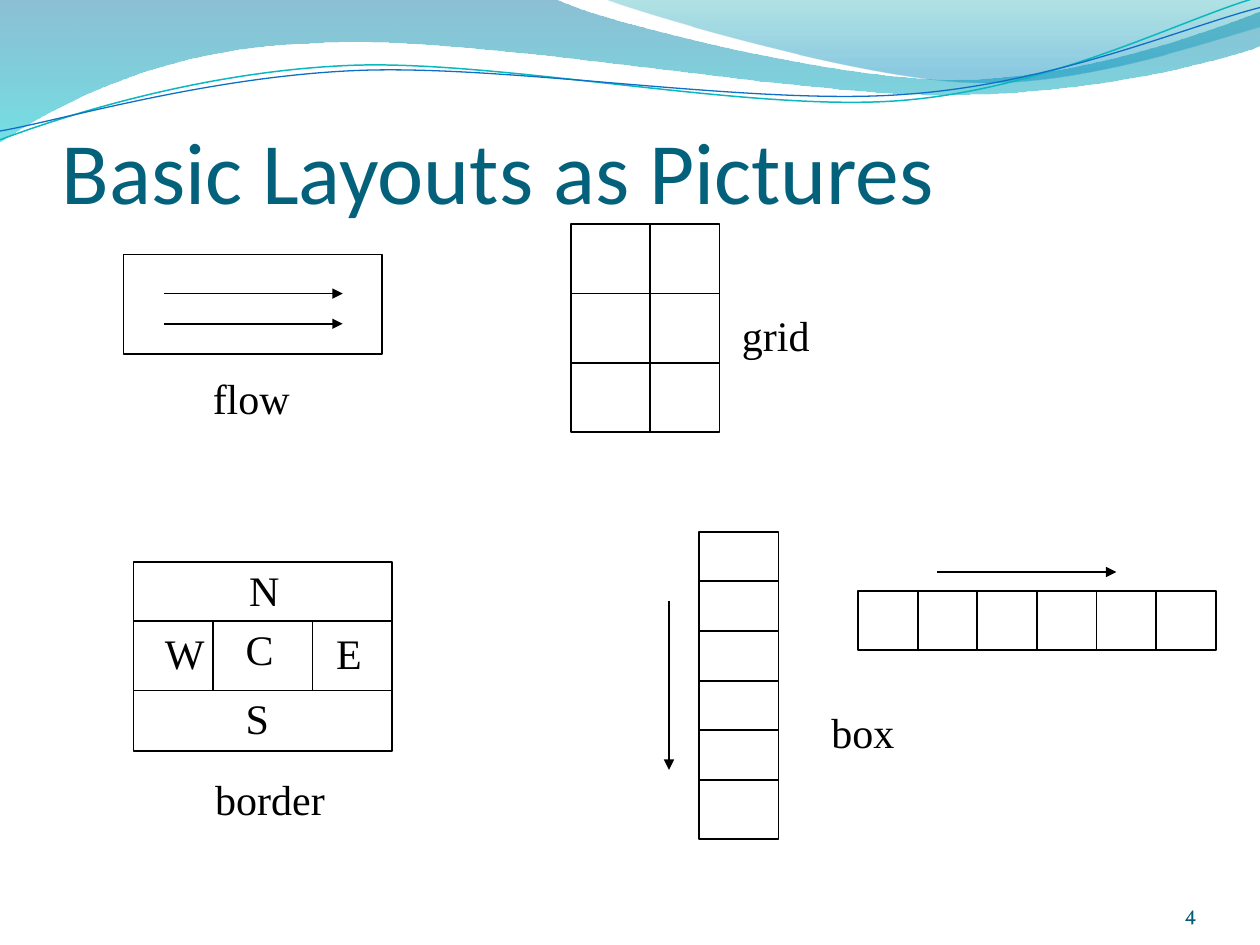
from dataclasses import dataclass
from lxml.etree import SubElement
from pptx import Presentation
from pptx.dml.color import RGBColor as RGB
from pptx.enum.shapes import MSO_CONNECTOR as LINK, MSO_SHAPE as SHAPE
from pptx.enum.text import MSO_ANCHOR as ANCHOR, MSO_AUTO_SIZE as FIT, PP_ALIGN as ALIGN
from pptx.oxml.ns import qn
from pptx.util import Inches, Pt


@dataclass(frozen=True)
class Theme:
    ink: str = "000000"
    title: str = "04617B"
    page: str = "045D75"
    teal: str = "0AB8BF"
    blue: str = "0F6FC6"
    head: str = "Calibri"
    body: str = "Times New Roman"
    foot: str = "Vollkorn"
    big: int = 50
    mid: int = 24
    small: int = 12
    rule: int = 1


THEME = Theme()


def style(run, face, size, color):
    run.font.name = face
    run.font.size = Pt(size)
    run.font.color.rgb = RGB.from_string(color)


def stroke(line, color, width):
    line.color.rgb = RGB.from_string(color)
    line.width = Pt(width)


def bend(shape, parts):
    legs = iter(list(shape.element.iter(qn("a:lnTo"))))
    for part in parts:
        group = [next(legs) for _ in range(len(part) // 2)]
        if len(group) == 3:
            first = group[0]
            first.tag = qn("a:cubicBezTo")
            for leg in group[1:]:
                first.append(leg[0])
                leg.getparent().remove(leg)


def outline(slide, start, parts, close):
    dots = [(Inches(part[i]), Inches(part[i + 1]))
            for part in parts for i in range(0, len(part), 2)]
    pen = slide.shapes.build_freeform(*map(Inches, start))
    pen.add_line_segments(dots, close=close)
    shape = pen.convert_to_shape()
    bend(shape, parts)
    shape.shadow.inherit = False
    return shape


def add_wave(slide, start, parts, stops):
    shape = outline(slide, start, parts, True)
    shape.line.fill.background()
    shape.fill.gradient()
    shape.fill.gradient_angle = 270
    for stop, (place, color, _) in zip(shape.fill.gradient_stops, stops):
        stop.position = place
        stop.color.rgb = RGB.from_string(color)
    tints = shape.element.spPr.iter(qn("a:srgbClr"))
    for tint, (_, _, alpha) in zip(tints, stops):
        SubElement(tint, qn("a:alpha"), val=str(alpha * 1000))


def add_curve(slide, start, parts, color, width):
    shape = outline(slide, start, parts, False)
    shape.fill.background()
    stroke(shape.line, color, width)


def add_frame(slide, x, y, w, h):
    box = slide.shapes.add_shape(SHAPE.RECTANGLE, *map(Inches, (x, y, w, h)))
    box.shadow.inherit = False
    box.fill.background()
    stroke(box.line, THEME.ink, THEME.rule)
    return box


def add_line(slide, x1, y1, x2, y2, arrow=False):
    line = slide.shapes.add_connector(LINK.STRAIGHT, *map(Inches, (x1, y1, x2, y2)))
    stroke(line.line, THEME.ink, THEME.rule)
    props = line.element.spPr
    if arrow:
        SubElement(props.find(qn("a:ln")), qn("a:tailEnd"), type="triangle")
    SubElement(props, qn("a:effectLst"))
    return line


def add_cells(slide, x, y, w, h, rows=(), cols=()):
    box = add_frame(slide, x, y, w, h)
    for row in rows:
        add_line(slide, x, row, x + w, row)
    for col in cols:
        line = add_line(slide, col, y, col, y + h)
        if abs(col - x - w / 2) < 0.01:
            line.begin_connect(box, 0)
            line.end_connect(box, 2)


def add_label(slide, text, x, y, w):
    box = slide.shapes.add_textbox(*map(Inches, (x, y, w, 0.5)))
    frame = box.text_frame
    frame.text = text
    frame.word_wrap = False
    frame.auto_size = FIT.SHAPE_TO_FIT_TEXT
    style(frame.paragraphs[0].runs[0], THEME.body, THEME.mid, THEME.ink)


def set_pads(frame, top):
    frame.margin_left = frame.margin_right = frame.margin_bottom = 0
    frame.margin_top = Inches(top)
    frame.vertical_anchor = ANCHOR.BOTTOM
    frame.word_wrap = True
    frame.auto_size = FIT.NONE


def add_title(slide, text):
    title = slide.shapes.title
    title.left, title.top, title.width, title.height = map(Inches, (0.49, 0.51, 9, 1.25))
    frame = title.text_frame
    frame.text = text
    set_pads(frame, 0.05)
    para = frame.paragraphs[0]
    para.alignment = ALIGN.LEFT
    style(para.runs[0], THEME.head, THEME.big, THEME.title)


def add_page(slide, text):
    box = slide.shapes.add_textbox(*map(Inches, (8.67, 6.95, 0.83, 0.4)))
    frame = box.text_frame
    frame.text = text
    set_pads(frame, 0)
    para = frame.paragraphs[0]
    para.alignment = ALIGN.RIGHT
    style(para.runs[0], THEME.foot, THEME.small, THEME.page)


def add_waves(slide):
    add_wave(slide, (0, 0), [
        (4.4, -0.01), (4.76, 0.17, 6.64, 0.63, 7.58, 0.63),
        (8.53, 0.63, 9.58, 0.26, 10, 0.09), (10.01, 0.36),
        (9.83, 0.44, 8.7, 0.76, 7.46, 0.75), (6.22, 0.75, 3.82, 0.28, 2.57, 0.34),
        (1.29, 0.36, 0.46, 0.83, -0.01, 1.13), (0, 0),
    ], [(0, "0074A1", 45), (1, "00C6CF", 55)])
    add_wave(slide, (4.79, -0.01), [
        (5.09, 0.11, 6.82, 0.62, 7.69, 0.65),
        (8.56, 0.69, 9.61, 0.32, 10, 0.21), (10, 0), (4.79, -0.01),
    ], [(0, "00A1A9", 30), (0.8, "008BBF", 45)])
    add_curve(slide, (0, 1.11), [
        (0.48, 0.93, 1.58, 0.57, 2.77, 0.52), (3.95, 0.47, 5.93, 0.89, 7.13, 0.8),
        (8.33, 0.71, 9.38, 0.15, 9.98, -0.02),
    ], THEME.teal, 0.85)
    add_curve(slide, (0, 1.04), [
        (0.47, 0.96, 1.64, 0.61, 2.83, 0.56), (4.03, 0.51, 5.97, 0.84, 7.17, 0.75),
        (8.36, 0.67, 9.41, 0.21, 10, 0.06),
    ], THEME.blue, 0.75)


def add_flow(slide):
    add_frame(slide, 0.98, 2.02, 2.05, 0.79)
    for y in (2.33, 2.57):
        add_line(slide, 1.3, y, 2.72, y, arrow=True)
    add_label(slide, "flow", 1.59, 2.91, 0.81)


def add_grid(slide):
    add_cells(slide, 4.53, 1.78, 1.18, 1.65, [1.78 + 0.55 * i for i in (1, 2)], [5.16])
    add_label(slide, "grid", 5.79, 2.41, 0.74)


def add_border(slide):
    add_cells(slide, 1.06, 4.46, 2.05, 1.5, [4.93, 5.48])
    for x in (1.69, 2.48):
        add_line(slide, x, 4.93, x, 5.48)
    for text, x, y, w in (("N", 1.88, 4.43, 0.44), ("C", 1.85, 4.9, 0.42),
                          ("S", 1.85, 5.45, 0.39), ("E", 2.57, 4.93, 0.4),
                          ("W", 1.21, 4.93, 0.52), ("border", 1.61, 6.09, 1.07)):
        add_label(slide, text, x, y, w)


def add_boxes(slide):
    step = (6.19 - 4.22) / 5
    add_cells(slide, 5.55, 4.22, 0.63, 2.44, rows=[4.22 + step * i for i in range(1, 6)])
    add_cells(slide, 6.81, 4.69, 2.84, 0.47, cols=[6.81 + 2.84 / 6 * i for i in range(1, 6)])
    add_line(slide, 5.31, 4.77, 5.31, 6.11, arrow=True)
    add_line(slide, 7.44, 4.54, 8.86, 4.54, arrow=True)
    add_label(slide, "box", 6.5, 5.56, 0.7)


def main():
    deck = Presentation()
    deck.slide_width, deck.slide_height = Inches(10), Inches(7.5)
    slide = deck.slides.add_slide(deck.slide_layouts[5])
    add_waves(slide)
    add_title(slide, "Basic Layouts as Pictures")
    for draw in (add_flow, add_grid, add_border, add_boxes):
        draw(slide)
    add_page(slide, "4")
    deck.save("out.pptx")


if __name__ == "__main__":
    main()
